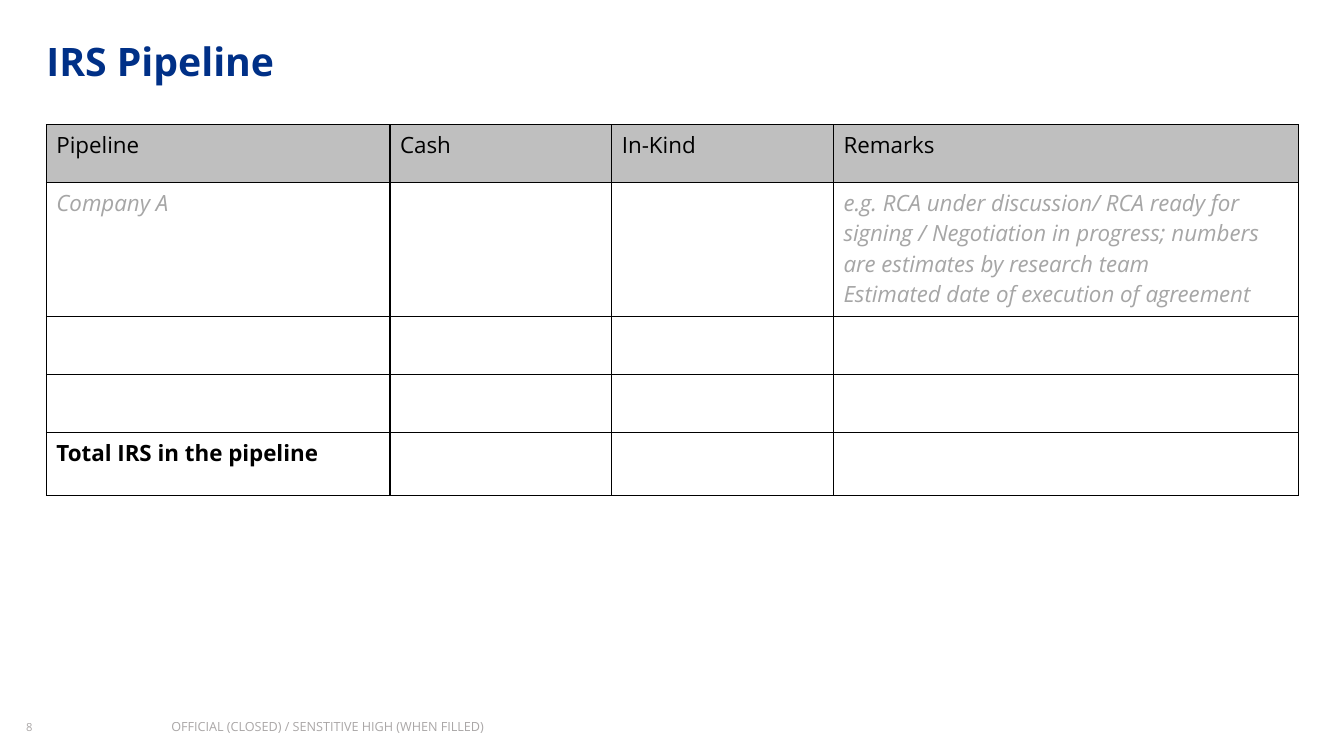
from lxml import etree
from pptx import Presentation
from pptx import util as u
from pptx.dml import color
from pptx.enum import text
from pptx.oxml import ns

COLORS = {"navy": "003087", "black": "000000", "header": "BFBFBF",
          "hint": "A6A6A6", "footer": "767171"}
FONT = "Open Sans"
COLUMN_WIDTHS = [245.5, 158.4, 158.4, 331.9]
ROW_HEIGHTS = [41.4, 95.7, 41.4, 41.4, 45]
HEADINGS = ["Pipeline", "Cash", "In-Kind", "Remarks"]
REMARKS = [
    "e.g. RCA under discussion/ RCA ready for signing / Negotiation in progress; "
    "numbers are estimates by research team",
    "Estimated date of execution of agreement",
]


def add_span(para, words, size, shade, bold=False, italic=False):
    """Add one formatted run to a paragraph."""
    span = para.add_run()
    span.text = words
    font = span.font
    font.name, font.size, font.bold, font.italic = FONT, u.Pt(size), bold, italic
    font.color.rgb = color.RGBColor.from_string(COLORS[shade])
    return span


def add_label(page, box, words, size, shade, bold=False, spacing=1.0):
    """Place a line of text without margins in the given box."""
    frame = page.shapes.add_textbox(*map(u.Pt, box)).text_frame
    frame.word_wrap = True
    frame.vertical_anchor = text.MSO_ANCHOR.TOP
    frame.margin_left = frame.margin_top = frame.margin_right = frame.margin_bottom = 0
    para = frame.paragraphs[0]
    para.line_spacing = spacing
    return add_span(para, words, size, shade, bold)


def add_footer(page, box):
    """Place the page number and the classification in translucent grey."""
    left, top, width, height = box
    number_width, indent = 56.9, 103.7
    number = add_label(page, (left, top, number_width, height), "8", 8, "footer", spacing=1.1)
    notice = add_label(page, (left + indent, top, width - indent, height),
                       "OFFICIAL (CLOSED) / SENSTITIVE HIGH (WHEN FILLED)", 9, "footer")
    for span in (number, notice):
        shade = span.font.fill._xPr.find(".//" + ns.qn("a:srgbClr"))
        etree.SubElement(shade, ns.qn("a:alpha"), val="61000")


def style_cell(cell, fill=None):
    """Give a cell thin black borders and an optional fill."""
    properties = cell._tc.get_or_add_tcPr()
    for side in ("lnL", "lnR", "lnT", "lnB"):
        line = etree.SubElement(properties, ns.qn("a:" + side), w=str(u.Pt(1)))
        solid = etree.SubElement(line, ns.qn("a:solidFill"))
        etree.SubElement(solid, ns.qn("a:srgbClr"), val=COLORS["black"])
    if fill:
        cell.fill.solid()
        cell.fill.fore_color.rgb = color.RGBColor.from_string(COLORS[fill])
    else:
        cell.fill.background()


def write_cell(cell, lines, shade="black", **style):
    """Write each line as its own paragraph of a cell."""
    frame = cell.text_frame
    for index, words in enumerate(lines):
        para = frame.add_paragraph() if index else frame.paragraphs[0]
        add_span(para, words, 16, shade, **style)


def add_pipeline_table(page, box):
    """Place the pipeline table in the given box."""
    table = page.shapes.add_table(len(ROW_HEIGHTS), len(COLUMN_WIDTHS), *map(u.Pt, box)).table
    table.first_row = table.horz_banding = False
    for column, width in zip(table.columns, COLUMN_WIDTHS):
        column.width = u.Pt(width)
    for index, (row, height) in enumerate(zip(table.rows, ROW_HEIGHTS)):
        row.height = u.Pt(height)
        for cell in row.cells:
            style_cell(cell, None if index else "header")
    for column, heading in enumerate(HEADINGS):
        write_cell(table.cell(0, column), [heading])
    write_cell(table.cell(1, 0), ["Company A"], "hint", italic=True)
    write_cell(table.cell(1, 3), REMARKS, "hint", italic=True)
    write_cell(table.cell(4, 0), ["Total IRS in the pipeline"], bold=True)


def main():
    """Build the one-page deck."""
    deck = Presentation()
    deck.slide_width, deck.slide_height = u.Pt(960), u.Pt(540)
    page = deck.slides.add_slide(deck.slide_layouts[6])
    add_label(page, (33.1, 23, 793.4, 37.4), "IRS Pipeline", 28, "navy", True, 1.1)
    add_pipeline_table(page, (33.1, 89, sum(COLUMN_WIDTHS), sum(ROW_HEIGHTS)))
    add_footer(page, (18.7, 513.4, 487.5, 13.7))
    deck.save("out.pptx")


if __name__ == "__main__":
    main()
